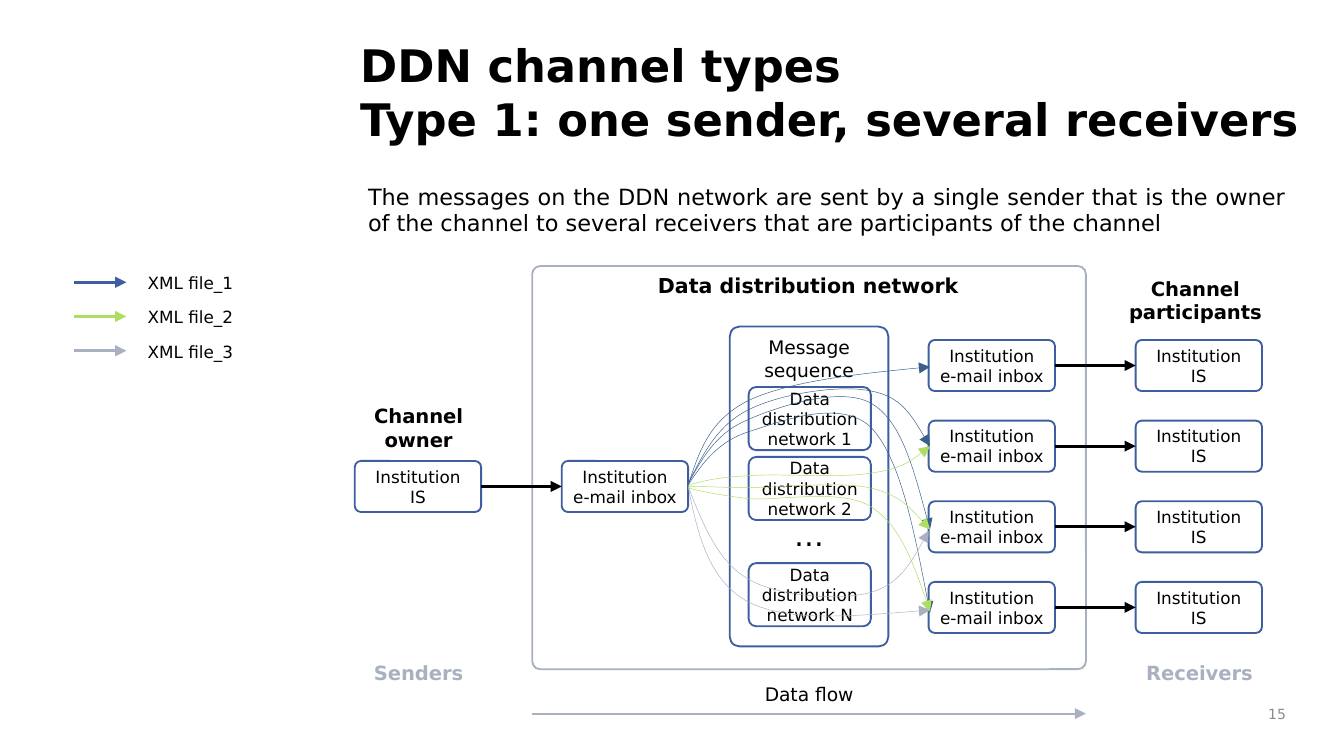
from pptx import Presentation
from pptx.dml.color import RGBColor
from pptx.enum.shapes import MSO_CONNECTOR, MSO_SHAPE
from pptx.enum.text import MSO_ANCHOR, MSO_AUTO_SIZE, PP_ALIGN
from pptx.oxml.ns import qn
from pptx.util import Inches, Pt
from lxml.etree import SubElement

BLACK, WHITE, BLUE, GREEN, GRAY, STEEL = "000000", "FFFFFF", "3E5E9F", "ADDE61", "A9B1C1", "3A5F8C"
LEFT, MID, RIGHT, JUST = PP_ALIGN.LEFT, PP_ALIGN.CENTER, PP_ALIGN.RIGHT, PP_ALIGN.JUSTIFY
TOP, CORE, BASE = MSO_ANCHOR.TOP, MSO_ANCHOR.MIDDLE, MSO_ANCHOR.BOTTOM
FACE = "DejaVu Sans"
SIZE = (10, 10 * 9 / 16)

TITLE = "DDN channel types\nType 1: one sender, several receivers"
BODY = ("The messages on the DDN network are sent by a single sender that is the owner "
        "of the channel to several receivers that are participants of the channel")
OWNER, PEER = "Institution\vIS", "Institution\ne-mail inbox"
HOME = "Institution\ve-mail inbox"
FILES = [("XML file_1", BLUE), ("XML file_2", GREEN), ("XML file_3", GRAY)]
NODES = [("1", 2.88), ("2", 3.40), ("N", 4.19)]
HEAD = {"size": 10.5, "bold": True, "align": MID, "pad": (0, 0.05)}
FOOT = {**HEAD, "color": GRAY}
LABELS = [
    ("15", (9.33, 5.19, 0.33, 0.25),
     {"size": 7.5, "color": "8C8C8C", "align": RIGHT, "anchor": CORE, "pad": (0.09, 0.05)}),
    ("Data distribution network", (4.77, 1.98, 2.49, 0.29),
     {"size": 11, "bold": True, "align": MID, "wrap": False}),
    ("Channel owner", (2.68, 2.96, 0.87, 0.45), HEAD),
    ("Channel participants", (8.31, 2.01, 1.17, 0.45), HEAD),
    ("Senders", (2.68, 4.87, 0.87, 0.28), FOOT),
    ("Receivers", (8.49, 4.87, 0.87, 0.28), FOOT),
    ("Data flow", (5.38, 5.03, 1.28, 0.28), {"size": 10, "align": MID, "pad": (0, 0.05)}),
    (BODY, (2.64, 1.31, 7.03, 0.69), {"size": 12, "align": JUST}),
]
FLOWS = [
    (STEEL, [(512, 361), (520, 337), (527, 313), (557, 298), (587, 284), (639, 278), (692, 273)]),
    (STEEL, [(512, 360), (523, 338), (534, 316), (557, 305), (580, 293), (626, 286), (648, 291),
             (671, 295), (681, 314), (692, 332)]),
    (STEEL, [(512, 360), (522, 342), (532, 323), (555, 313), (577, 303), (625, 287), (648, 300),
             (671, 313), (681, 354), (692, 394)]),
    (STEEL, [(512, 361), (523, 344), (535, 328), (558, 321), (580, 314), (625, 296), (648, 318),
             (670, 341), (681, 399), (692, 456)]),
    (GREEN, [(512, 361), (523, 358), (534, 355), (556, 354), (579, 352), (625, 356), (648, 352),
             (670, 349), (681, 341), (692, 332)]),
    (GREEN, [(512, 362), (527, 362), (542, 363), (557, 363), (579, 363), (624, 358), (647, 363),
             (669, 368), (680, 381), (692, 394)]),
    (GREEN, [(512, 363), (523, 366), (534, 368), (556, 371), (579, 373), (625, 363), (648, 377),
             (670, 391), (681, 423), (692, 455)]),
    (GRAY, [(512, 362), (519, 397), (527, 432), (557, 448), (587, 463), (639, 458), (692, 454)]),
    (GRAY, [(512, 362), (523, 390), (534, 418), (557, 431), (579, 444), (625, 447), (647, 441),
            (669, 435), (680, 415), (691, 395)]),
]
COLS, ROWS, WIDE, HIGH = [2.64, 4.18, 6.91, 8.45], range(4), 0.94, 0.38


def tint(code):
    """Turn a hex string into a colour."""
    return RGBColor.from_string(code)


def write(shape, text, size=9, color=BLACK, bold=False, align=LEFT, anchor=TOP, pad=(0.1, 0.05), wrap=True):
    """Fill the text frame of a shape and format it."""
    frame = shape.text_frame
    frame.text = text
    side, edge = map(Inches, pad)
    look = {"word_wrap": wrap, "auto_size": MSO_AUTO_SIZE.NONE, "vertical_anchor": anchor, "margin_left": side,
            "margin_right": side, "margin_top": edge, "margin_bottom": edge}
    for key, value in look.items():
        setattr(frame, key, value)
    for para in frame.paragraphs:
        para.alignment = align
        for run in para.runs:
            for key, value in {"name": FACE, "size": Pt(size), "bold": bold}.items():
                setattr(run.font, key, value)
            run.font.color.rgb = tint(color)


def label(slide, text, box, **style):
    """Add a text box."""
    write(slide.shapes.add_textbox(*map(Inches, box)), text, **style)


def card(slide, box, text="", adj=0.121, fill=WHITE, line=BLUE, **style):
    """Add a rounded box, with text if there is any."""
    shape = slide.shapes.add_shape(MSO_SHAPE.ROUNDED_RECTANGLE, *map(Inches, box))
    shape.shadow.inherit = False
    shape.adjustments[0] = adj
    if fill:
        shape.fill.solid()
        shape.fill.fore_color.rgb = tint(fill)
    else:
        shape.fill.background()
    shape.line.color.rgb = tint(line)
    shape.line.width = Pt(1)
    if text:
        write(shape, text, **{"align": MID, "anchor": CORE, "pad": (0.04, 0.05), **style})


def point(shape, color, width):
    """Colour a line and give its end an arrowhead."""
    shape.line.color.rgb = tint(color)
    shape.line.width = Pt(width)
    props = shape.element.spPr
    SubElement(props.find(qn("a:ln")), qn("a:tailEnd"), type="triangle")
    if props.find(qn("a:effectLst")) is None:
        SubElement(props, qn("a:effectLst"))


def arrow(slide, left, right, y, color=BLACK, width=1.5):
    """Add a level arrow."""
    ends = map(Inches, (left, y, right, y))
    point(slide.shapes.add_connector(MSO_CONNECTOR.STRAIGHT, *ends), color, width)


def curve(slide, color, dots):
    """Draw a path through dots in hundredths of an inch, each three steps bent into one arc."""
    pen = slide.shapes.build_freeform(*dots[0], scale=Inches(0.01))
    pen.add_line_segments(dots[1:], close=False)
    shape = pen.convert_to_shape()
    shape.shadow.inherit = False
    shape.fill.background()
    steps = list(shape.element.iter(qn("a:lnTo")))
    track = steps[0].getparent()
    for i in range(0, len(steps), 3):
        arc = SubElement(track, qn("a:cubicBezTo"))
        for step in steps[i:i + 3]:
            arc.append(step[0])
            track.remove(step)
    point(shape, color, 0.25)


def main():
    """Build the slide."""
    deck = Presentation()
    deck.slide_width, deck.slide_height = map(Inches, SIZE)
    slide = deck.slides.add_slide(deck.slide_layouts[5])
    title = slide.shapes.title
    for key, value in zip(("left", "top", "width", "height"), (2.58, 0.23, 7.92, 0.85)):
        setattr(title, key, Inches(value))
    write(title, TITLE, size=24, bold=True)

    card(slide, (3.96, 1.98, 4.12, 3), adj=0.02, fill=None, line=GRAY)
    card(slide, (5.43, 2.43, 1.18, 2.38), "Message sequence", adj=0.062, size=10, anchor=TOP, pad=(0, 0.05))
    for name, y in NODES:
        card(slide, (5.57, y, 0.91, 0.47), f"Data distribution network {name}")
    label(slide, "…", (5.93, 3.84, 0.18, 0.27), size=16, align=MID, anchor=BASE, pad=(0, 0), wrap=False)

    links = [(1.5, COLS[:2], (OWNER, HOME))] + [(row, COLS[2:], (PEER, OWNER)) for row in ROWS]
    for row, pair, texts in links:
        y = 2.53 + 0.6 * row
        for x, text in zip(pair, texts):
            card(slide, (x, y, WIDE, HIGH), text)
        arrow(slide, pair[0] + WIDE, pair[1], y + HIGH / 2)
    for color, dots in FLOWS:
        curve(slide, color, dots)

    arrow(slide, 3.96, 8.08, 5.31, GRAY, 1)
    for i, (name, color) in enumerate(FILES):
        y = 1.98 + 0.255 * i
        arrow(slide, 0.55, 0.94, y + 0.12, color)
        label(slide, name, (1, y, 1.08, 0.25))
    for text, box, style in LABELS:
        label(slide, text, box, **style)
    deck.save("out.pptx")


if __name__ == "__main__":
    main()
